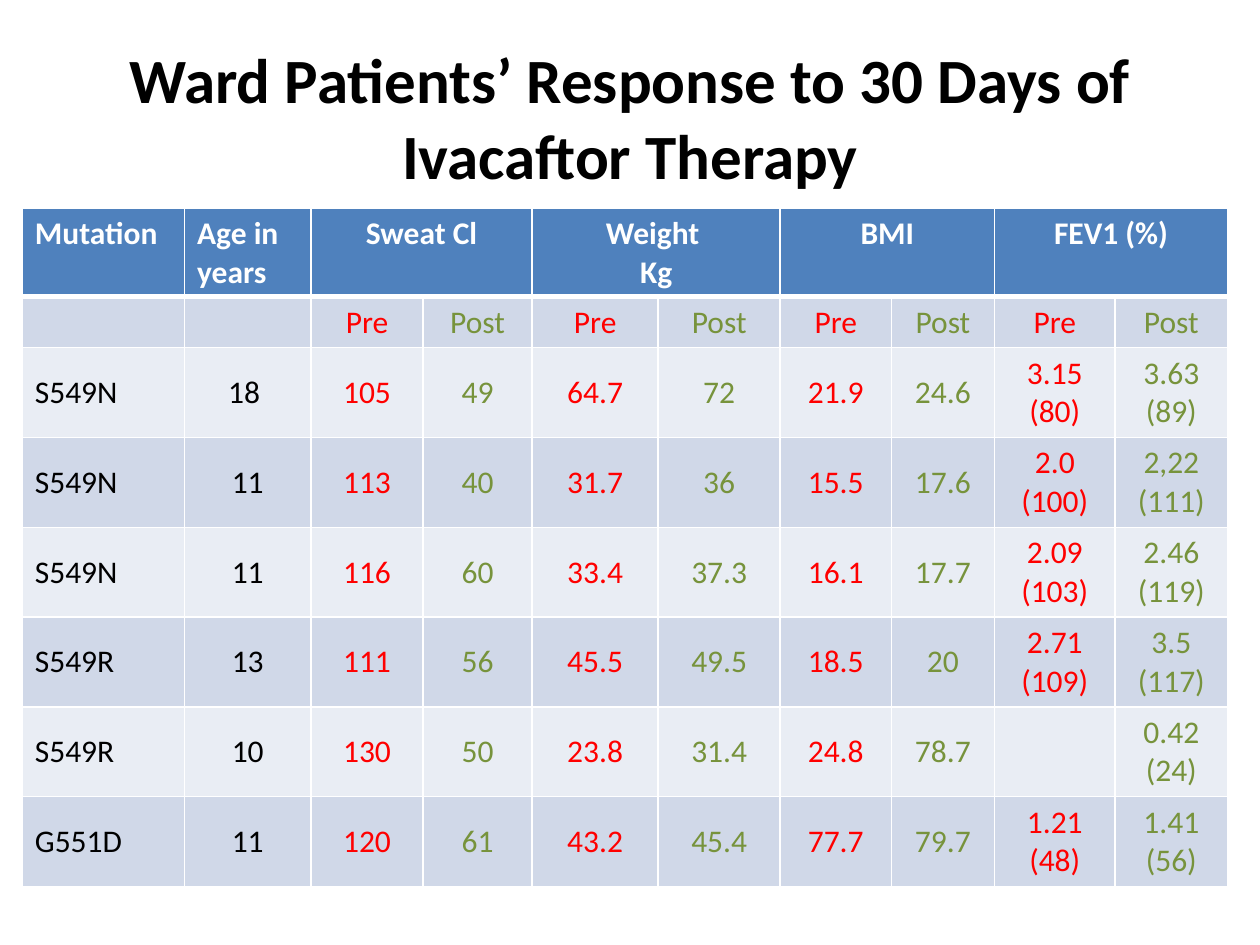
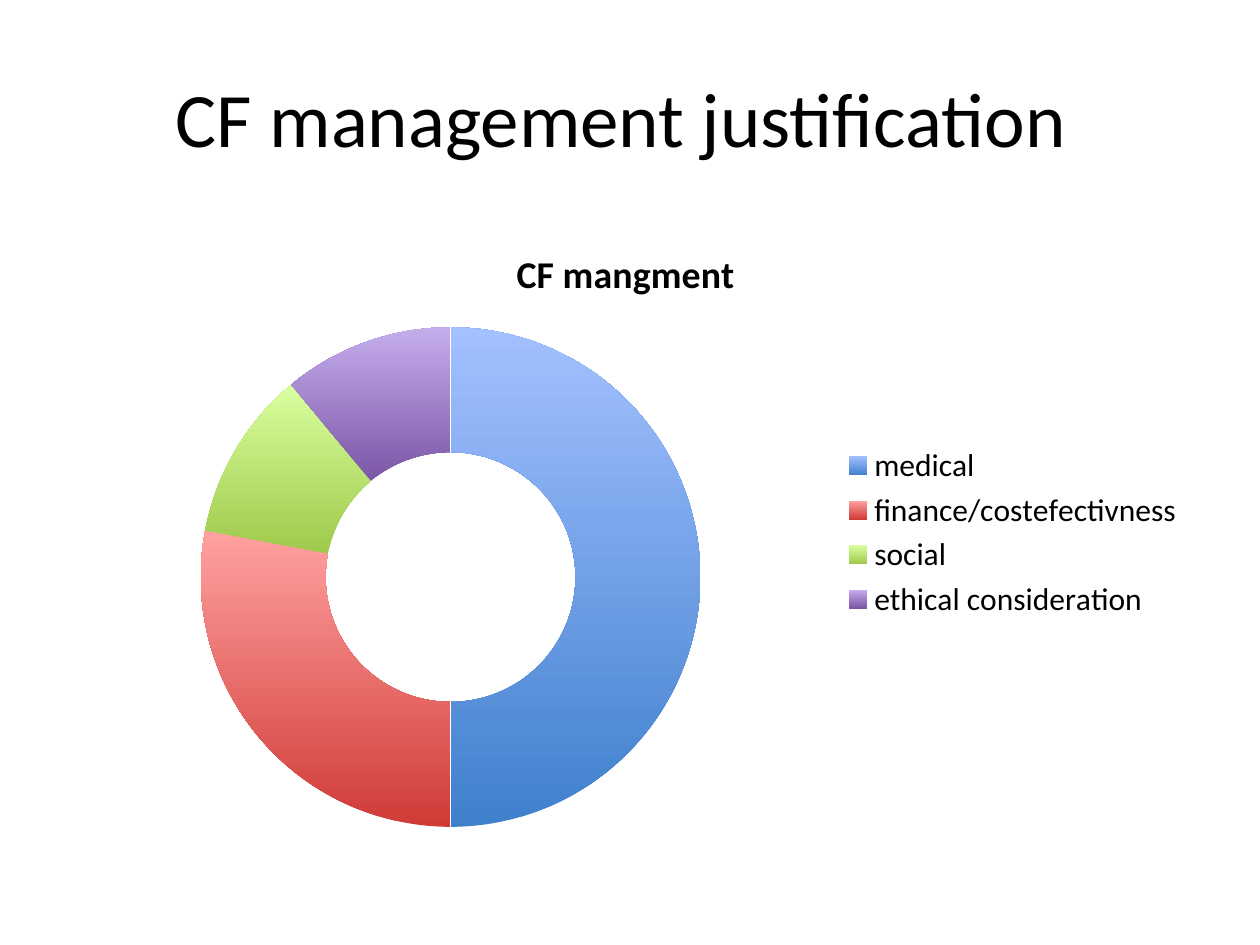
from lxml.etree import SubElement
from pptx import Presentation
from pptx.chart.data import CategoryChartData
from pptx.dml.color import RGBColor
from pptx.enum.chart import XL_CHART_TYPE, XL_LEGEND_POSITION
from pptx.enum.text import MSO_ANCHOR, PP_ALIGN
from pptx.oxml.ns import qn
from pptx.util import Cm, Pt

FONT = "Calibri"
COLORS = {
    "text": "000000", "white": "FFFFFF", "header": "4F81BD",
    "band_dark": "D0D8E8", "band_light": "E9EDF4",
    "pre": "FF0000", "post": "77933C",
}
# Lower and upper gradient colour of each ring slice
SLICE_GRADIENTS = [("3F80CD", "A3C0FF"), ("D03B37", "FFA2A0"),
                   ("9FC94B", "DAFF9F"), ("7B56A6", "C5ADEC")]

# Boxes: left, top, width, height in centimetres
TITLE_BOX = (1.27, 0.76, 22.86, 3.18)
TABLE_BOX = (0.45, 4.2, 24.3, 13.67)
CHART_BOX = (1.27, 4.45, 22.86, 12.57)

COLUMN_WIDTHS = [3.27, 2.55, 2.26, 2.2, 2.54, 2.46, 2.24, 2.08, 2.43, 2.27]
ROW_HEIGHTS = [1.78, 1.03] + [1.81] * 6
MEASURES = ["Sweat Cl", "Weight \nKg", "BMI", "FEV1 (%)"]
HEADER = ["Mutation", "Age in years"]
for measure in MEASURES:
    HEADER += [measure, ""]
PATIENTS = [
    ["S549N", "18 ", "105", "49", "64.7", "72", "21.9", "24.6", "3.15 (80)", "3.63 (89)"],
    ["S549N", "11", "113", "40", "31.7", "36", "15.5", "17.6", "2.0 (100)", "2,22 (111)"],
    ["S549N", "11", "116", "60", "33.4", "37.3", "16.1", "17.7", "2.09 (103)", "2.46 (119)"],
    ["S549R", "13", "111", "56", "45.5", "49.5", "18.5", "20", "2.71 (109)", "3.5 (117)"],
    ["S549R", "10", "130", "50", "23.8", "31.4", "24.8", "78.7", "", "0.42 (24)"],
    ["G551D", "11", "120", "61", "43.2", "45.4", "77.7", "79.7", "1.21 (48)", "1.41 (56)"],
]
REASONS = {"medical": 50, "finance/costefectivness": 28,
           "social": 11, "ethical consideration": 11}


def rgb(name):
    return RGBColor.from_string(COLORS[name])


def style_font(font, size, color="text", bold=False):
    font.name, font.size, font.bold = FONT, Pt(size), bold
    font.color.rgb = rgb(color)


def style_text(frame, size, color="text", bold=False, align=PP_ALIGN.CENTER):
    for para in frame.paragraphs:
        para.alignment = align
        for span in para.runs:
            style_font(span.font, size, color, bold)


def add_title(page, box, text, size, bold=False):
    frame = page.shapes.add_textbox(*map(Cm, box)).text_frame
    frame.word_wrap = True
    frame.vertical_anchor = MSO_ANCHOR.MIDDLE
    frame.text = text
    style_text(frame, size, bold=bold)


def set_borders(cell, bottom_width):
    properties = cell._tc.get_or_add_tcPr()
    for side, width in (("L", 1), ("R", 1), ("T", 1), ("B", bottom_width)):
        line = SubElement(properties, qn(f"a:ln{side}"), w=str(Pt(width)))
        fill = SubElement(line, qn("a:solidFill"))
        SubElement(fill, qn("a:srgbClr"), val=COLORS["white"])


def fill_cell(cell, row, column, text):
    is_header = row == 0
    # Borders go before the fill in the cell properties
    set_borders(cell, 3 if is_header else 1)
    cell.fill.solid()
    band = "band_dark" if row % 2 else "band_light"
    cell.fill.fore_color.rgb = rgb("header" if is_header else band)
    cell.vertical_anchor = MSO_ANCHOR.TOP if is_header else MSO_ANCHOR.MIDDLE

    if is_header:
        color = "white"
    elif column < 2:
        color = "text"
    else:
        color = "post" if column % 2 else "pre"
    left_aligned = column == 0 or (is_header and column == 1)
    if text:
        cell.text_frame.text = text
        style_text(cell.text_frame, 18, color, is_header,
                   PP_ALIGN.LEFT if left_aligned else PP_ALIGN.CENTER)


def add_response_table(page, box):
    rows = [HEADER, ["", ""] + ["Pre", "Post"] * len(MEASURES)] + PATIENTS
    table = page.shapes.add_table(len(rows), len(HEADER), *map(Cm, box)).table
    for column, width in zip(table.columns, COLUMN_WIDTHS):
        column.width = Cm(width)
    for row, height in zip(table.rows, ROW_HEIGHTS):
        row.height = Cm(height)
    for r, texts in enumerate(rows):
        for c, text in enumerate(texts):
            fill_cell(table.cell(r, c), r, c, text)
    # Each measure heads a pre/post pair of columns
    for c in range(2, len(HEADER), 2):
        table.cell(0, c).merge(table.cell(0, c + 1))


def add_reasons_chart(page, box):
    name = "CF mangment "
    data = CategoryChartData()
    data.categories = list(REASONS)
    data.add_series(name, list(REASONS.values()))
    chart = page.shapes.add_chart(XL_CHART_TYPE.DOUGHNUT, *map(Cm, box), data).chart
    style_font(chart.font, 18)

    # Title and legend
    chart.has_title = True
    chart.chart_title.text_frame.text = name
    style_text(chart.chart_title.text_frame, 21.6, bold=True)
    chart.has_legend = True
    chart.legend.position = XL_LEGEND_POSITION.RIGHT
    chart.legend.include_in_layout = False
    style_font(chart.legend.font, 18)

    # Ring slices
    plot = chart.plots[0]
    plot.vary_by_categories = True
    plot.has_data_labels = False
    for index, colors in enumerate(SLICE_GRADIENTS):
        look = plot.series[0].points[index].format
        look.fill.gradient()
        look.fill.gradient_angle = 90
        for stop, color in zip(look.fill.gradient_stops, colors):
            stop.color.rgb = RGBColor.from_string(color)
        look.line.fill.background()


def main():
    deck = Presentation()
    deck.slide_width, deck.slide_height = Cm(25.4), Cm(19.05)
    blank = deck.slide_layouts[6]

    # Patient response
    page = deck.slides.add_slide(blank)
    add_title(page, TITLE_BOX, "Ward Patients’ Response to 30 Days of Ivacaftor Therapy",
              36, bold=True)
    add_response_table(page, TABLE_BOX)

    # Management justification
    page = deck.slides.add_slide(blank)
    add_title(page, TITLE_BOX, "CF management justification ", 44)
    add_reasons_chart(page, CHART_BOX)

    deck.save("out.pptx")


if __name__ == "__main__":
    main()
